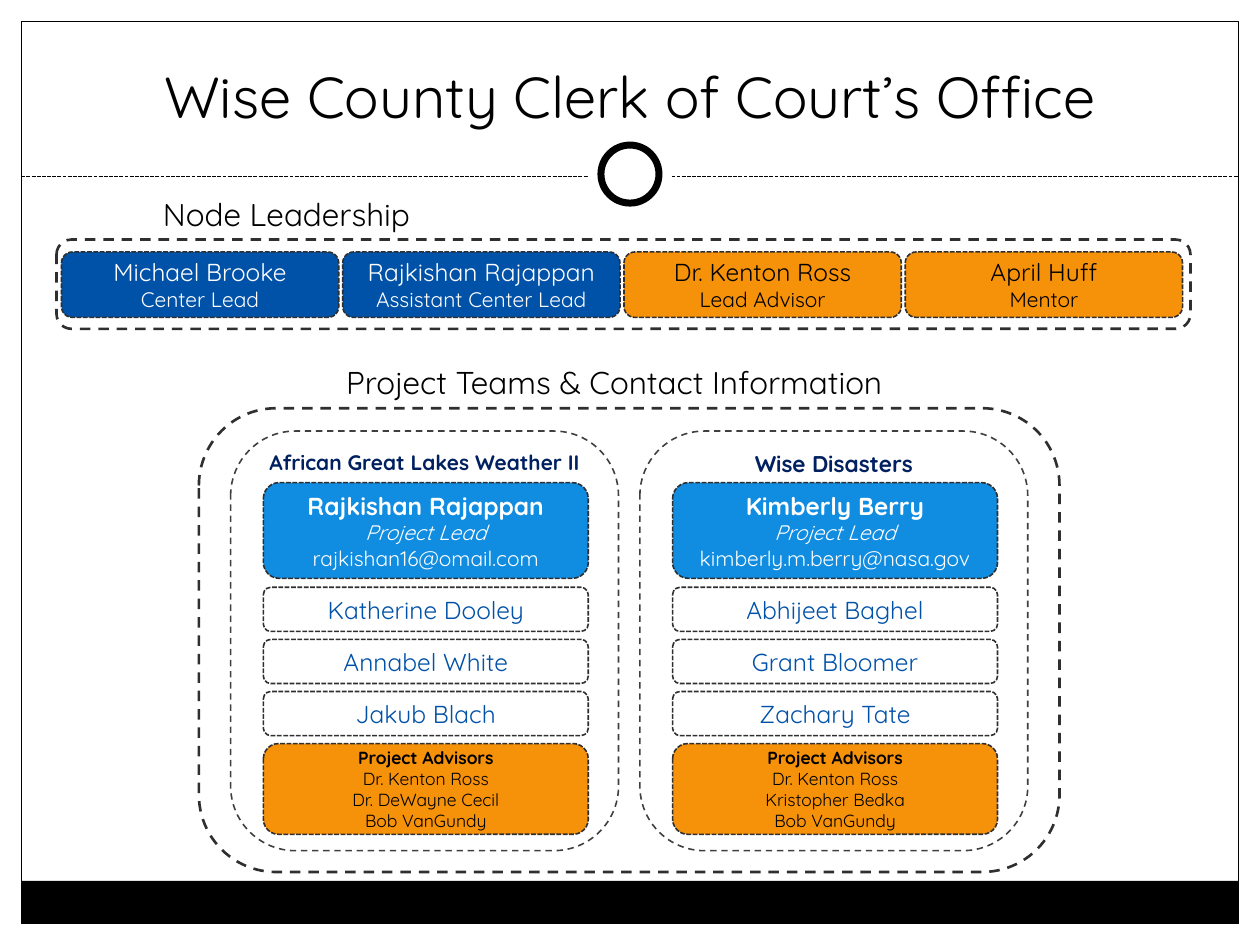
from pptx import Presentation
from pptx.dml.color import RGBColor
from pptx.enum.dml import MSO_LINE_DASH_STYLE as DASH
from pptx.enum.shapes import MSO_CONNECTOR, MSO_SHAPE as SHAPE
from pptx.enum.text import MSO_ANCHOR as ANCHOR, MSO_AUTO_SIZE as AUTO_SIZE, PP_ALIGN as ALIGN
from pptx.oxml.ns import qn
from pptx.util import Cm, Pt
from lxml.etree import SubElement

FONT = "Quicksand"
BLACK = RGBColor(0, 0, 0)
WHITE = RGBColor(255, 255, 255)
BLUE = RGBColor(0x00, 0x51, 0xA8)
LIGHT_BLUE = RGBColor(0x10, 0x8C, 0xE0)
NAVY = RGBColor(0x00, 0x20, 0x60)
ORANGE = RGBColor(0xF6, 0x91, 0x0A)
DARK_GREY = RGBColor(0x2F, 0x2F, 0x2F)
GREY = RGBColor(0x3F, 0x3F, 0x3F)

LEADERS = [
    ("Michael Brooke", "Center Lead", BLUE, WHITE),
    ("Rajkishan Rajappan", "Assistant Center Lead", BLUE, WHITE),
    ("Dr. Kenton Ross", "Lead Advisor", ORANGE, BLACK),
    ("April Huff", "Mentor", ORANGE, BLACK),
]
TEAMS = [
    {
        "project": "African Great Lakes Weather II", "size": 12,
        "lead": ["Rajkishan Rajappan", "Project Lead", "rajkishan16@omail.com"],
        "members": ["Katherine Dooley", "Annabel White", "Jakub Blach"],
        "advisors": ["Dr. Kenton Ross", "Dr. DeWayne Cecil", "Bob VanGundy"],
    },
    {
        "project": "Wise Disasters", "size": 13,
        "lead": ["Kimberly Berry", "Project Lead", "kimberly.m.berry@nasa.gov"],
        "members": ["Abhijeet Baghel", "Grant Bloomer", "Zachary Tate"],
        "advisors": ["Dr. Kenton Ross", "Kristopher Bedka", "Bob VanGundy"],
    },
]


def add_box(slide, kind, box, fill=None, line=None, width=0.9, dash=None):
    """Add a preset shape; box is left, top, width, height in cm."""
    shape = slide.shapes.add_shape(kind, *map(Cm, box))
    shape.shadow.inherit = False
    if fill is None:
        shape.fill.background()
    else:
        shape.fill.solid()
        shape.fill.fore_color.rgb = fill
    if line is None:
        shape.line.fill.background()
    else:
        shape.line.color.rgb = line
        shape.line.width = Pt(width)
        if dash is not None:
            shape.line.dash_style = dash
    return shape


def write(shape, lines, color, align=ALIGN.CENTER):
    """Write lines of (text, size, bold, italic)."""
    frame = shape.text_frame
    frame.text = "\n".join(line[0] for line in lines)
    for paragraph, (_, size, bold, italic) in zip(frame.paragraphs, lines):
        paragraph.alignment = align
        for run in paragraph.runs:
            font = run.font
            font.name, font.size, font.color.rgb = FONT, Pt(size), color
            font.bold, font.italic = bold, italic


def add_card(slide, box, lines, color, fill=None):
    card = add_box(slide, SHAPE.ROUNDED_RECTANGLE, box, fill, DARK_GREY, dash=DASH.SQUARE_DOT)
    card.text_frame.word_wrap = True
    card.text_frame.vertical_anchor = ANCHOR.MIDDLE
    write(card, lines, color)


def add_group_outline(slide, box):
    add_box(slide, SHAPE.ROUNDED_RECTANGLE, box, None, DARK_GREY, 1.5, DASH.DASH)


def add_label(slide, box, text, align):
    label = slide.shapes.add_textbox(*map(Cm, box))
    label.text_frame.word_wrap = False
    label.text_frame.auto_size = AUTO_SIZE.SHAPE_TO_FIT_TEXT
    write(label, [(text, 18, False, False)], BLACK, align)


def add_frame(slide, box):
    """Page border, footer band, and the dotted rule with its ring."""
    left, top, width, height = box
    footer, rule, center = 0.86, top + 3.13, left + width / 2
    add_box(slide, SHAPE.RECTANGLE, (left, top + height - footer, width, footer), BLACK)
    add_box(slide, SHAPE.RECTANGLE, box, None, BLACK, 0.75)
    divider = slide.shapes.add_connector(
        MSO_CONNECTOR.STRAIGHT, Cm(left), Cm(rule), Cm(left + width), Cm(rule))
    divider.line.color.rgb = BLACK
    divider.line.width = Pt(0.75)
    divider.line.dash_style = DASH.SQUARE_DOT
    SubElement(divider.line._get_or_add_ln().getparent(), qn("a:effectLst"))
    for size, line in ((1.7, None), (1.17, BLACK)):
        ring = (center - size / 2, rule - 0.05 - size / 2, size, size)
        add_box(slide, SHAPE.OVAL, ring, WHITE, line, 4)


def add_title(slide, box, text):
    title = slide.shapes.title
    title.left, title.top, title.width, title.height = map(Cm, box)
    title.text_frame.auto_size = AUTO_SIZE.NONE
    title.text_frame.vertical_anchor = ANCHOR.BOTTOM
    write(title, [(text, 33, False, False)], BLACK)


def add_leadership(slide, box):
    left, top, width, _ = box
    add_label(slide, (left + 1.7, top - 1.02, 5.87, 1.02), "Node Leadership", ALIGN.CENTER)
    add_group_outline(slide, box)
    for i, (name, role, fill, color) in enumerate(LEADERS):
        add_card(slide, (left + 0.1 + i * 5.67, top + 0.25, 5.59, 1.32),
                 [(name, 14, False, False), (role, 12, False, False)], color, fill)


def add_team(slide, box, team):
    left, top, _, _ = box
    # Panel with the project name
    panel = add_box(slide, SHAPE.ROUNDED_RECTANGLE, box, None, GREY, dash=DASH.DASH)
    panel.text_frame.word_wrap = True
    panel.text_frame.vertical_anchor = ANCHOR.TOP
    panel.text_frame.margin_top = 0
    write(panel, [(team["project"], team["size"], True, False)], NAVY)
    # Project lead
    card_left, card_width = left + 0.66, 6.55
    name, role, email = team["lead"]
    add_card(slide, (card_left, top + 1.04, card_width, 1.93),
             [(name, 14, True, False), (role, 12, False, True), (email, 12, False, False)],
             WHITE, LIGHT_BLUE)
    # Members
    for i, member in enumerate(team["members"]):
        add_card(slide, (card_left, top + 3.15 + i * 1.05, card_width, 0.89),
                 [(member, 14, False, False)], BLUE)
    # Advisors
    advisors = [(advisor, 10, False, False) for advisor in team["advisors"]]
    add_card(slide, (card_left, top + 6.3, card_width, 1.83),
             [("Project Advisors", 10, True, False)] + advisors, BLACK, ORANGE)


def add_project_teams(slide, box):
    left, top, _, _ = box
    add_label(slide, (left + 2.72, top - 1.04, 12.01, 1.02),
              "Project Teams & Contact Information", ALIGN.LEFT)
    add_group_outline(slide, box)
    for i, team in enumerate(TEAMS):
        add_team(slide, (left + 0.64 + i * 8.25, top + 0.46, 7.82, 8.46), team)


def main():
    deck = Presentation()
    deck.slide_width, deck.slide_height = Cm(25.4), Cm(19.05)
    slide = deck.slides.add_slide(deck.slide_layouts[5])
    add_frame(slide, (0.43, 0.43, 24.54, 18.19))
    add_title(slide, (0.85, 0.64, 23.7, 2.11), "Wise County Clerk of Court’s Office")
    add_leadership(slide, (1.14, 4.83, 22.86, 1.8))
    add_project_teams(slide, (4.01, 8.23, 17.35, 9.35))
    deck.save("out.pptx")


if __name__ == "__main__":
    main()
